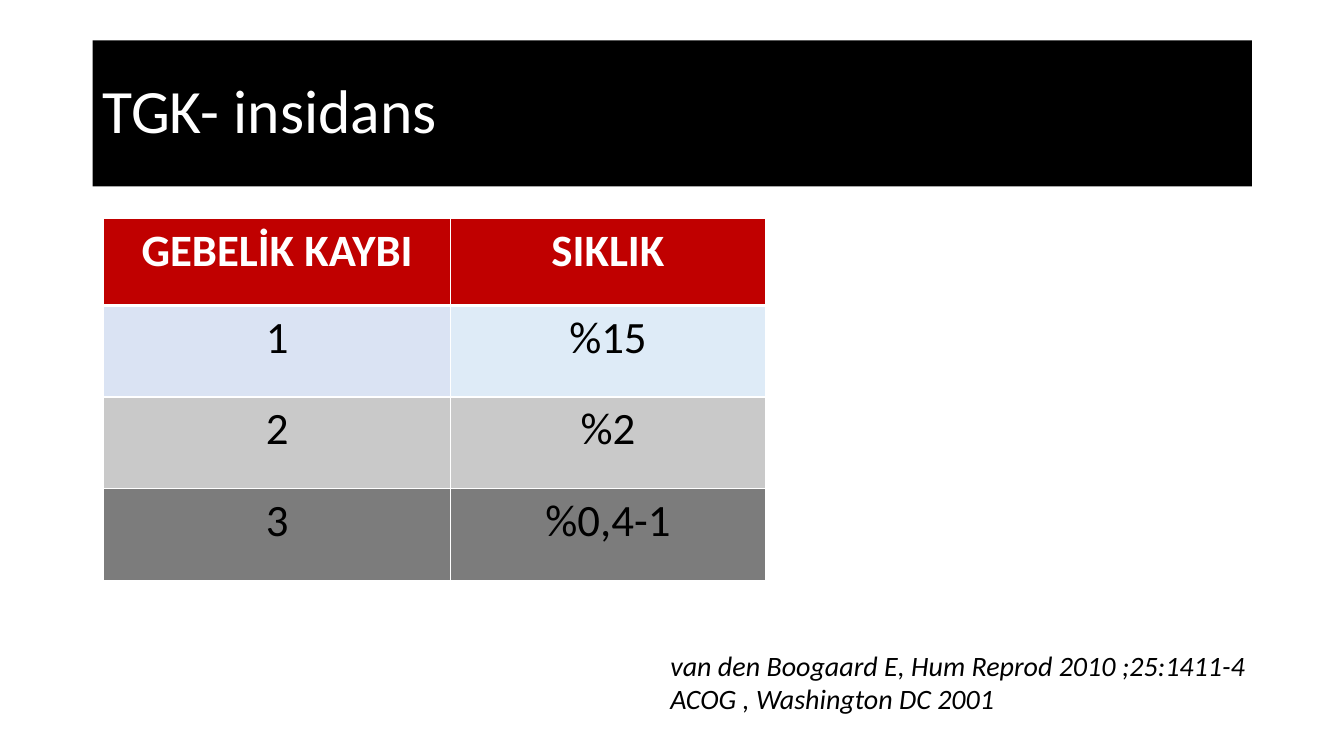
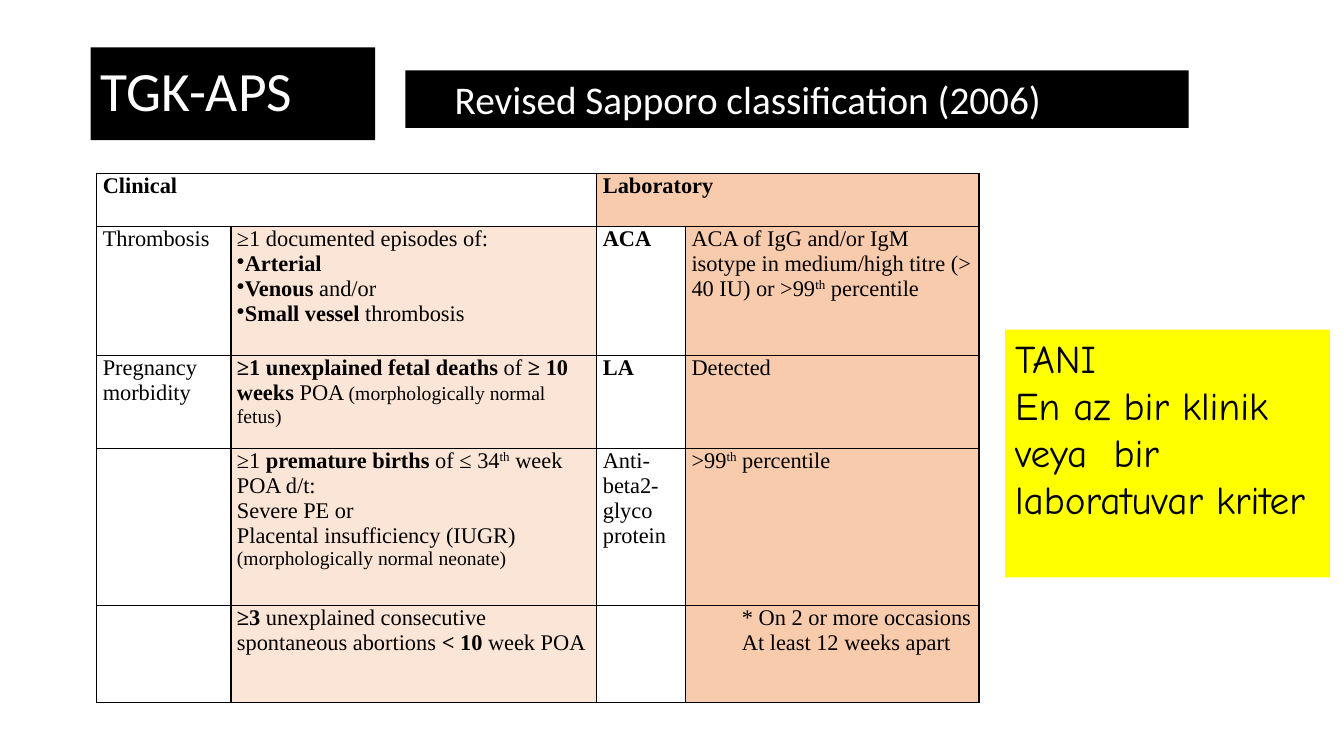
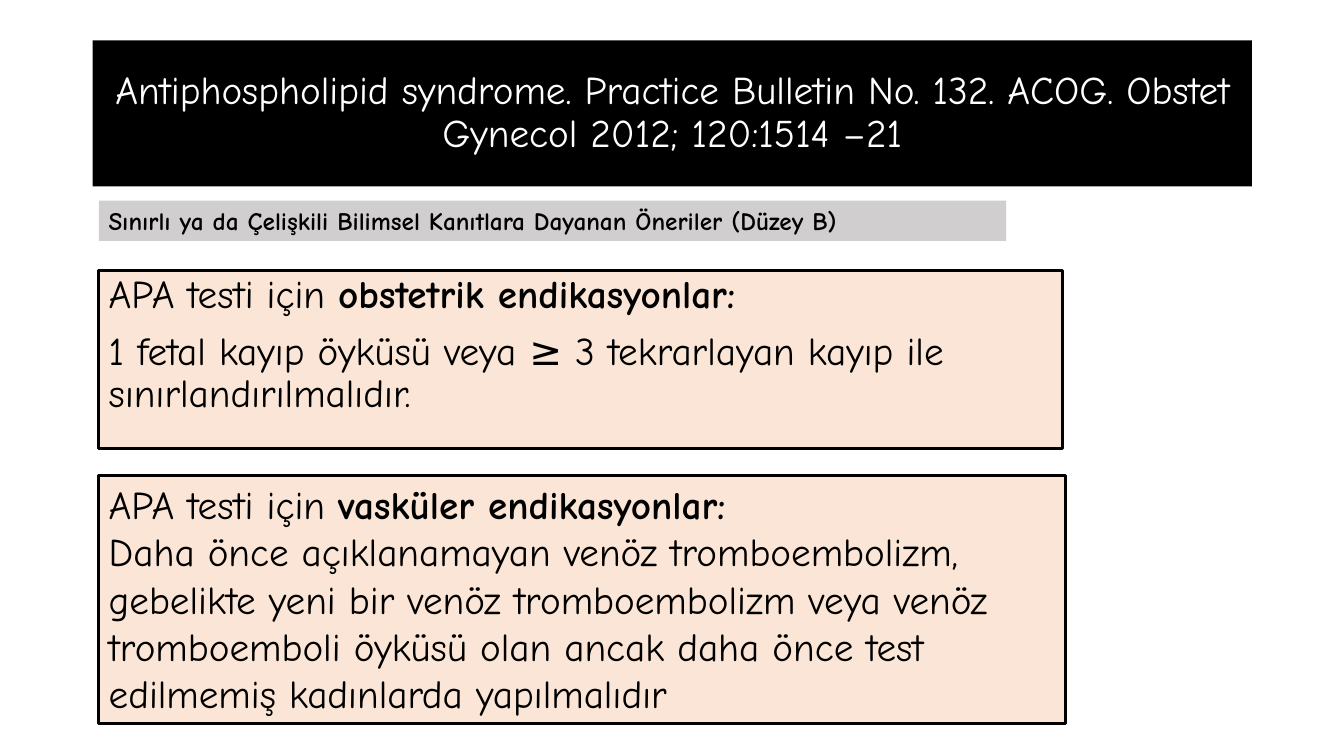
from lxml.etree import SubElement
from pptx import Presentation
from pptx.dml.color import RGBColor
from pptx.enum.shapes import MSO_SHAPE
from pptx.enum.text import MSO_ANCHOR, MSO_AUTO_SIZE, PP_ALIGN
from pptx.oxml import parse_xml
from pptx.oxml.ns import nsdecls, qn
from pptx.util import Emu, Inches, Pt

COLORS = {
    "black": "000000", "white": "FFFFFF", "red": "C00000", "yellow": "FFFF00",
    "ice": "DAE3F3", "sky": "DEEBF7", "silver": "C9C9C9", "gray": "7C7C7C",
    "peach": "FBE5D6", "orange": "F8CBAD", "ash": "D0CECE",
}
SANS, COMIC, SERIF = "Calibri", "Comic Neue", "Times New Roman"
BOLD, RAISED, SMALL = "bold", "raised", "small"

presentation = Presentation()
presentation.slide_width, presentation.slide_height = Inches(13.33), Inches(7.5)


def place(shares):
    """Turn percentages of the slide (left, top, width, height) into lengths."""
    sides = (presentation.slide_width, presentation.slide_height) * 2
    return [Emu(round(side * share / 100)) for side, share in zip(sides, shares)]


def write(frame, paragraphs, size=28, font=COMIC, color="black", bold=False, italic=False,
          align=PP_ALIGN.LEFT, spacing=None, before=0):
    """Fill a text frame; a paragraph is a string or a list of strings and (text, style)."""
    for index, runs in enumerate(paragraphs):
        paragraph = frame.paragraphs[0] if index == 0 else frame.add_paragraph()
        paragraph.alignment = align
        paragraph.space_before = Pt(before)
        if spacing:
            paragraph.line_spacing = spacing
        if runs[0] == "•":
            runs = runs[1:]
            properties = paragraph._p.get_or_add_pPr()
            properties.set("marL", "0")
            properties.set("indent", "0")
            SubElement(properties, qn("a:buChar")).set("char", "•")
        for item in [runs] if isinstance(runs, str) else runs:
            text, style = (item, None) if isinstance(item, str) else item
            run = paragraph.add_run()
            run.text = text
            run.font.name = font
            run.font.size = Pt(14 if style == SMALL else size)
            run.font.bold = bold or style == BOLD
            run.font.italic = italic
            run.font.color.rgb = RGBColor.from_string(COLORS[color])
            if style == RAISED:
                run.font._element.set("baseline", "30000")


# Slides with their title bands
wide_band = (6.9, 5.33, 86.25, 19.33)
titles = [
    (wide_band, "TGK- insidans", dict(size=44, font=SANS)),
    ((6.75, 6.27, 21.16, 12.27), "TGK-APS", dict(size=39.6, font=SANS)),
    (wide_band, "Antiphospholipid syndrome. Practice Bulletin No. 132. ACOG. Obstet "
     "Gynecol 2012; 120:1514 –21", dict(align=PP_ALIGN.CENTER)),
]
slides = []
for area, text, style in titles:
    slide = presentation.slides.add_slide(presentation.slide_layouts[5])
    title = slide.shapes.title
    title.left, title.top, title.width, title.height = place(area)
    title.fill.solid()
    title.fill.fore_color.rgb = RGBColor.from_string(COLORS["black"])
    title.text_frame.auto_size = MSO_AUTO_SIZE.NONE
    title.text_frame.vertical_anchor = MSO_ANCHOR.MIDDLE
    write(title.text_frame, [text], color="white", spacing=0.9, **style)
    slides.append(slide)
incidence_slide, criteria_slide, advice_slide = slides

# Tables: each cell is a pair of fill and paragraphs
incidence_rows = [
    [("red", ["GEBELİK KAYBI"]), ("red", ["SIKLIK"])],
    [("ice", ["1"]), ("sky", ["%15"])],
    [("silver", ["2"]), ("silver", ["%2"])],
    [("gray", ["3"]), ("gray", ["%0,4-1"])],
]
criteria_rows = [
    [("white", [[("Clinical", BOLD)]]), ("white", []),
     ("orange", [[("Laboratory", BOLD)]]), ("orange", [])],
    [("white", ["Thrombosis"]),
     ("peach", ["≥1 documented episodes of:",
                ["•", ("Arterial", BOLD)],
                ["•", ("Venous", BOLD), " and/or"],
                ["•", ("Small vessel", BOLD), " thrombosis"]]),
     (None, [[("ACA", BOLD)]]),
     ("orange", [["ACA of IgG and/or IgM isotype in medium/high titre (> 40 IU) or >99",
                  ("th", RAISED), " percentile"]])],
    [("white", ["Pregnancy morbidity"]),
     ("peach", [[("≥1 unexplained fetal deaths", BOLD), " of ", ("≥ 10 weeks ", BOLD),
                 "POA ", ("(morphologically normal fetus)", SMALL)]]),
     (None, [[("LA", BOLD)]]),
     ("orange", ["Detected"])],
    [("white", []),
     ("peach", [["≥1 ", ("premature births", BOLD), " of ≤ 34", ("th", RAISED),
                 " week POA d/t:"],
                "Severe PE or",
                "Placental insufficiency (IUGR)",
                [("(morphologically normal neonate)", SMALL)]]),
     (None, ["Anti-beta2-glyco", "protein"]),
     ("orange", [[">99", ("th", RAISED), " percentile"]])],
    [("white", []),
     ("peach", [[("≥3", BOLD), " unexplained consecutive spontaneous abortions ",
                 ("< 10", BOLD), " week POA"]]),
     (None, []),
     ("orange", ["* On 2 or more occasions", "At least 12 weeks apart"])],
]
tables = [
    (incidence_slide, (7.73, 28.93), (25.81, 23.41), (11.47, 12.13, 12.13, 12.13),
     incidence_rows, "white", 3, dict(size=32, font=SANS, align=PP_ALIGN.CENTER)),
    (criteria_slide, (7.2, 22.93), (9.98, 27.23, 6.6, 21.83),
     (7.07, 17.07, 12.27, 20.8, 12.8),
     criteria_rows, "black", 1, dict(size=16, font=SERIF)),
]
for slide, corner, columns, rows, content, border, header_rule, style in tables:
    area = (*corner, sum(columns), sum(rows))
    table = slide.shapes.add_table(len(rows), len(columns), *place(area)).table
    table.first_row = table.horz_banding = False
    for column, share in zip(table.columns, columns):
        column.width = place((share,))[0]
    for row, share in zip(table.rows, rows):
        row.height = place((0, share))[1]
    for row_index, row_content in enumerate(content):
        for column_index, (fill, paragraphs) in enumerate(row_content):
            cell = table.cell(row_index, column_index)
            is_header = content is incidence_rows and row_index == 0
            if content is criteria_rows:
                cell.margin_left = cell.margin_right = Inches(0.06)
                cell.margin_top = cell.margin_bottom = 0
            write(cell.text_frame, paragraphs, bold=is_header,
                  color="white" if is_header else "black", **style)
            if fill:
                cell.fill.solid()
                cell.fill.fore_color.rgb = RGBColor.from_string(COLORS[fill])
            else:
                cell.fill.background()
            # Cell borders, heavier under the header row
            heavy_side = {0: "lnB", 1: "lnT"}.get(row_index)
            for position, side in enumerate(("lnL", "lnR", "lnT", "lnB")):
                weight = Pt(header_rule if side == heavy_side else 1)
                cell._tc.get_or_add_tcPr().insert(position, parse_xml(
                    f'<a:{side} {nsdecls("a")} w="{weight}"><a:solidFill>'
                    f'<a:srgbClr val="{COLORS[border]}"/></a:solidFill></a:{side}>'))
    if content is criteria_rows:
        for first in (0, 2):
            table.cell(0, first).merge(table.cell(0, first + 1))
        table.cell(4, 3).margin_left = Inches(0.56)

# Filled panels: slide, area, fill, outlined, left margin, paragraphs, format
panels = [
    (criteria_slide, (74.79, 43.6, 24.16, 32.8), "yellow", False, 0.1,
     ["TANI", "En az bir klinik veya  bir laboratuvar kriter"], {}),
    (criteria_slide, (30.16, 9.33, 58.29, 7.6), "black", False, 0.49,
     ["Revised Sapporo classification (2006)"], dict(font=SANS, color="white")),
    (advice_slide, (7.35, 26.53, 67.52, 5.33), "ash", False, 0.1,
     ["Sınırlı ya da Çelişkili Bilimsel Kanıtlara Dayanan Öneriler (Düzey B)"],
     dict(size=18, bold=True)),
    (advice_slide, (7.35, 35.73, 71.72, 23.6), "peach", True, 0.1,
     [["APA testi için ", ("obstetrik endikasyonlar:", BOLD)],
      "1 fetal kayıp öyküsü veya ≥ 3 tekrarlayan kayıp ile sınırlandırılmalıdır."],
     dict(spacing=0.9, before=10)),
    (advice_slide, (7.35, 62.93, 71.94, 32.8), "peach", True, 0.1,
     [["APA testi için ", ("vasküler endikasyonlar:", BOLD)],
      "Daha önce açıklanamayan venöz tromboembolizm, gebelikte yeni bir venöz "
      "tromboembolizm veya venöz tromboemboli öyküsü olan ancak daha önce test "
      "edilmemiş kadınlarda yapılmalıdır"], {}),
]
for slide, area, fill, outlined, margin, paragraphs, style in panels:
    shape = slide.shapes.add_shape(MSO_SHAPE.RECTANGLE, *place(area))
    shape.shadow.inherit = False
    shape.fill.solid()
    shape.fill.fore_color.rgb = RGBColor.from_string(COLORS[fill])
    if outlined:
        shape.line.color.rgb = RGBColor.from_string(COLORS["black"])
        shape.line.width = Pt(2.25)
    else:
        shape.line.fill.background()
    shape.text_frame.word_wrap = True
    shape.text_frame.vertical_anchor = MSO_ANCHOR.TOP
    shape.text_frame.margin_left = Inches(margin)
    write(shape.text_frame, paragraphs, **style)

# References under the incidence table
references = incidence_slide.shapes.add_textbox(*place((49.14, 85.07, 44.56, 10.27)))
references.text_frame.word_wrap = False
write(references.text_frame,
      ["van den Boogaard E, Hum Reprod 2010 ;25:1411-4", "ACOG , Washington DC 2001"],
      size=20, font=SANS, italic=True)

presentation.save("out.pptx")
